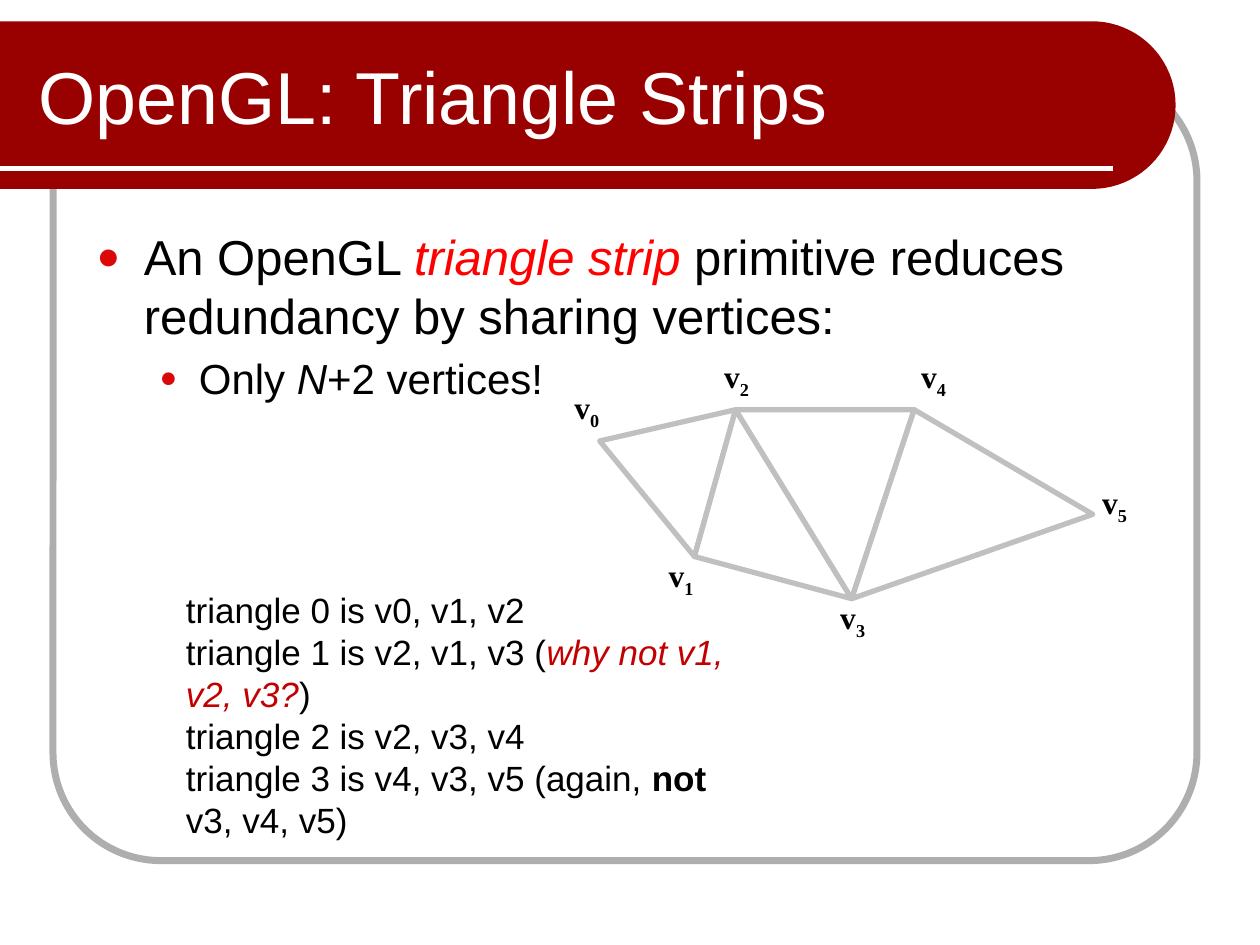
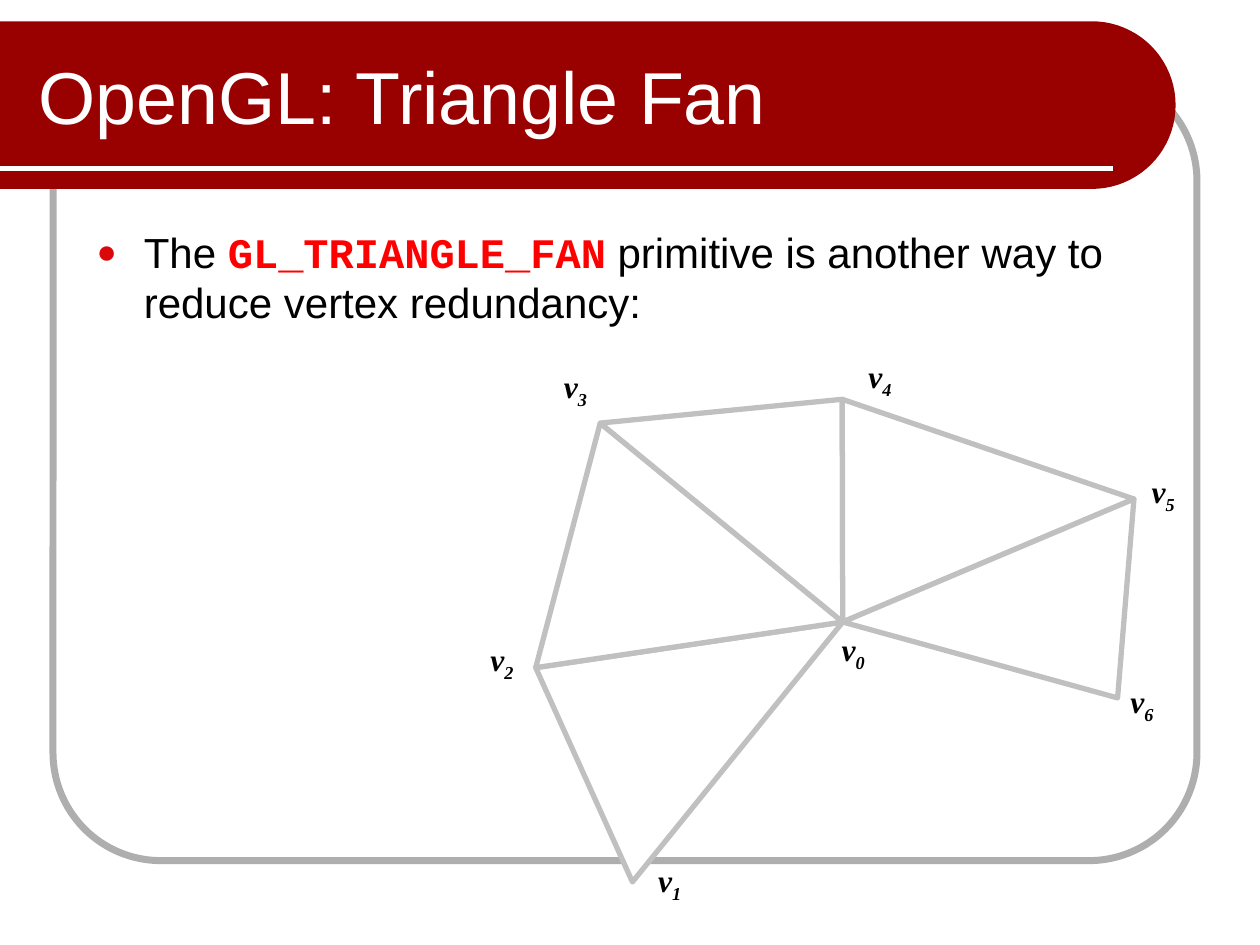
from dataclasses import dataclass
from math import cos, pi, sin

from lxml import etree
from pptx import Presentation, util as u
from pptx.dml.color import RGBColor
from pptx.enum import shapes, text
from pptx.oxml.ns import qn

RED, WHITE, BLACK = "990000", "FFFFFF", "000000"
GREY, EDGE, DOT, HOT, WARM = "AEAEAE", "C0C0C0", "DA0808", "FF0000", "C30000"
SANS, SERIF, MONO = "Arial", "Times New Roman", "Courier New"
Point = tuple[float, float]
Area = tuple[float, float, float, float]


@dataclass
class Run:
    text: str
    color: str | None = None
    face: str | None = None
    bold: bool = False
    italic: bool = False
    sub: bool = False


@dataclass
class Para:
    runs: list[Run]
    size: float
    left: float = 0
    hang: float = 0
    dot: int = 0  # bullet size in percent, 0 for none
    gap: float = 0


@dataclass
class Vertex:
    spot: Point
    label: Point  # left and top of its label


def rgb(code: str) -> RGBColor:
    return RGBColor.from_string(code)


def paint(shape, fill: str | None = None, line: str | None = None, width: float = 0) -> None:
    shape.shadow.inherit = False
    if fill:
        shape.fill.solid()
        shape.fill.fore_color.rgb = rgb(fill)
    else:
        shape.fill.background()
    if line:
        shape.line.color.rgb = rgb(line)
        shape.line.width = u.Pt(width)
    else:
        shape.line.fill.background()


def outline(slide, spots: list[Point], **look) -> None:
    pts = [(u.Cm(x), u.Cm(y)) for x, y in spots]
    pen = slide.shapes.build_freeform(*pts[0])
    pen.add_line_segments(pts[1:], close=True)
    paint(pen.convert_to_shape(), **look)


def indent(par, item: Para) -> None:
    """Set the indents and the bullet of a paragraph."""
    props = par._p.get_or_add_pPr()
    props.set("marL", str(u.Cm(item.left)))
    props.set("indent", str(u.Cm(-item.hang)))
    if item.dot:
        color = etree.SubElement(props, qn("a:buClr"))
        etree.SubElement(color, qn("a:srgbClr"), val=DOT)
        etree.SubElement(props, qn("a:buSzPct"), val=str(item.dot * 1000))
        etree.SubElement(props, qn("a:buFont"), typeface=SANS)
        etree.SubElement(props, qn("a:buChar"), char="●")


def write(slide, area: Area, paras: list[Para], color: str = BLACK, face: str = SANS,
          middle: bool = False, center: bool = False, wrap: bool = True) -> None:
    frame = slide.shapes.add_textbox(*map(u.Cm, area)).text_frame
    frame.word_wrap = wrap
    frame.vertical_anchor = text.MSO_ANCHOR.MIDDLE if middle else text.MSO_ANCHOR.TOP
    for i, item in enumerate(paras):
        par = frame.add_paragraph() if i else frame.paragraphs[0]
        indent(par, item)
        par.alignment = text.PP_ALIGN.CENTER if center else text.PP_ALIGN.LEFT
        if item.gap:
            par.space_before = u.Pt(item.gap)
        for part in item.runs:
            run = par.add_run()
            run.text = part.text
            font = run.font
            font.size = u.Pt(item.size)
            font.name = part.face or face
            font.color.rgb = rgb(part.color or color)
            font.bold, font.italic = part.bold, part.italic
            if part.sub:
                font._element.set("baseline", "-25000")


def start(deck, title: str, body: list[Para]):
    """Add a slide with the frame, the red band, a title and bullets."""
    slide = deck.slides.add_slide(deck.slide_layouts[6])
    frame = slide.shapes.add_shape(shapes.MSO_SHAPE.ROUNDED_RECTANGLE,
                                   *map(u.Cm, (1.07, 1.47, 23.06, 15.88)))
    frame.adjustments[0] = 0.137
    paint(frame, line=GREY, width=4)

    top, radius, bend, steps = 0.43, 1.69, 22.01, 40
    angles = [pi * (i / steps - 0.5) for i in range(steps + 1)]
    cap = [(bend + radius * cos(a), top + radius * (1 + sin(a))) for a in angles]
    outline(slide, [(0, top), *cap, (0, top + 2 * radius)], fill=RED)

    rule = slide.shapes.add_connector(shapes.MSO_CONNECTOR.STRAIGHT,
                                      *map(u.Cm, (0, 3.39, 22.44, 3.39)))
    rule.line.color.rgb = rgb(WHITE)
    rule.line.width = u.Pt(3)
    etree.SubElement(rule._element.spPr, qn("a:effectLst"))

    write(slide, (0.53, 0.64, 19.79, 2.54), [Para([Run(title)], 42)], color=WHITE, middle=True)
    write(slide, (1.7, 4.44, 22.02, 12.28), body)
    return slide


def mesh(slide, nodes: list[Vertex], faces: list[tuple[int, int, int]], italic: bool) -> None:
    """Draw the triangles, then number the vertices."""
    for face in faces:
        outline(slide, [nodes[i].spot for i in face], fill=WHITE, line=EDGE, width=3)
    for i, node in enumerate(nodes):
        name = [Run("v", bold=True, italic=italic), Run(str(i), bold=True, italic=italic, sub=True)]
        write(slide, (*node.label, 1.2, 1.27), [Para(name, 18)], face=SERIF,
              middle=True, center=True, wrap=False)


def strip(deck) -> None:
    slide = start(deck, "OpenGL: Triangle Strips", [
        Para([Run("An OpenGL "), Run("triangle strip ", HOT, italic=True),
              Run("primitive reduces redundancy by sharing vertices:")], 28, 0.95, 0.95, 80),
        Para([Run("Only "), Run("N", italic=True), Run("+2 vertices!")], 24, 2.06, 0.79, 70, 4.8),
    ])
    nodes = [
        Vertex((12.09, 8.89), (11.23, 7.62)),
        Vertex((14, 11.22), (13.13, 11)),
        Vertex((14.83, 8.26), (14.25, 6.99)),
        Vertex((17.17, 12.07), (16.59, 11.85)),
        Vertex((18.43, 8.26), (18.22, 6.99)),
        Vertex((22.03, 10.37), (21.87, 9.53)),
    ]
    mesh(slide, nodes, [(i, i + 1, i + 2) for i in range(len(nodes) - 2)], italic=False)
    lines = [
        [Run("triangle 0 is v0, v1, v2")],
        [Run("triangle 1 is v2, v1, v3 ("), Run("why not v1, v2, v3?", WARM, italic=True), Run(")")],
        [Run("triangle 2 is v2, v3, v4")],
        [Run("triangle 3 is v4, v3, v5 (again, "), Run("not", bold=True), Run(" v3, v4, v5)")],
    ]
    write(slide, (2.23, 11.73, 13.33, 4.5), [Para(line, 20, 1.27) for line in lines])


def fan(deck) -> None:
    slide = start(deck, "OpenGL: Triangle Fan", [
        Para([Run("The "), Run("GL_TRIANGLE_FAN", HOT, MONO, bold=True),
              Run(" primitive is another way to reduce vertex redundancy:")], 24, 0.95, 0.95, 80),
    ])
    nodes = [
        Vertex((16.99, 12.54), (16.6, 12.5)),
        Vertex((12.75, 17.78), (12.9, 17.15)),
        Vertex((10.8, 13.46), (9.52, 12.7)),
        Vertex((12.1, 8.53), (11, 7.19)),
        Vertex((16.98, 8.05), (17.14, 6.99)),
        Vertex((22.86, 10.06), (22.85, 9.32)),
        Vertex((22.53, 14.07), (22.42, 13.54)),
    ]
    mesh(slide, nodes, [(0, i, i + 1) for i in range(1, len(nodes) - 1)], italic=True)


def main() -> None:
    deck = Presentation()
    deck.slide_width, deck.slide_height = u.Cm(25.4), u.Cm(19.05)
    strip(deck)
    fan(deck)
    deck.save("out.pptx")


if __name__ == "__main__":
    main()
